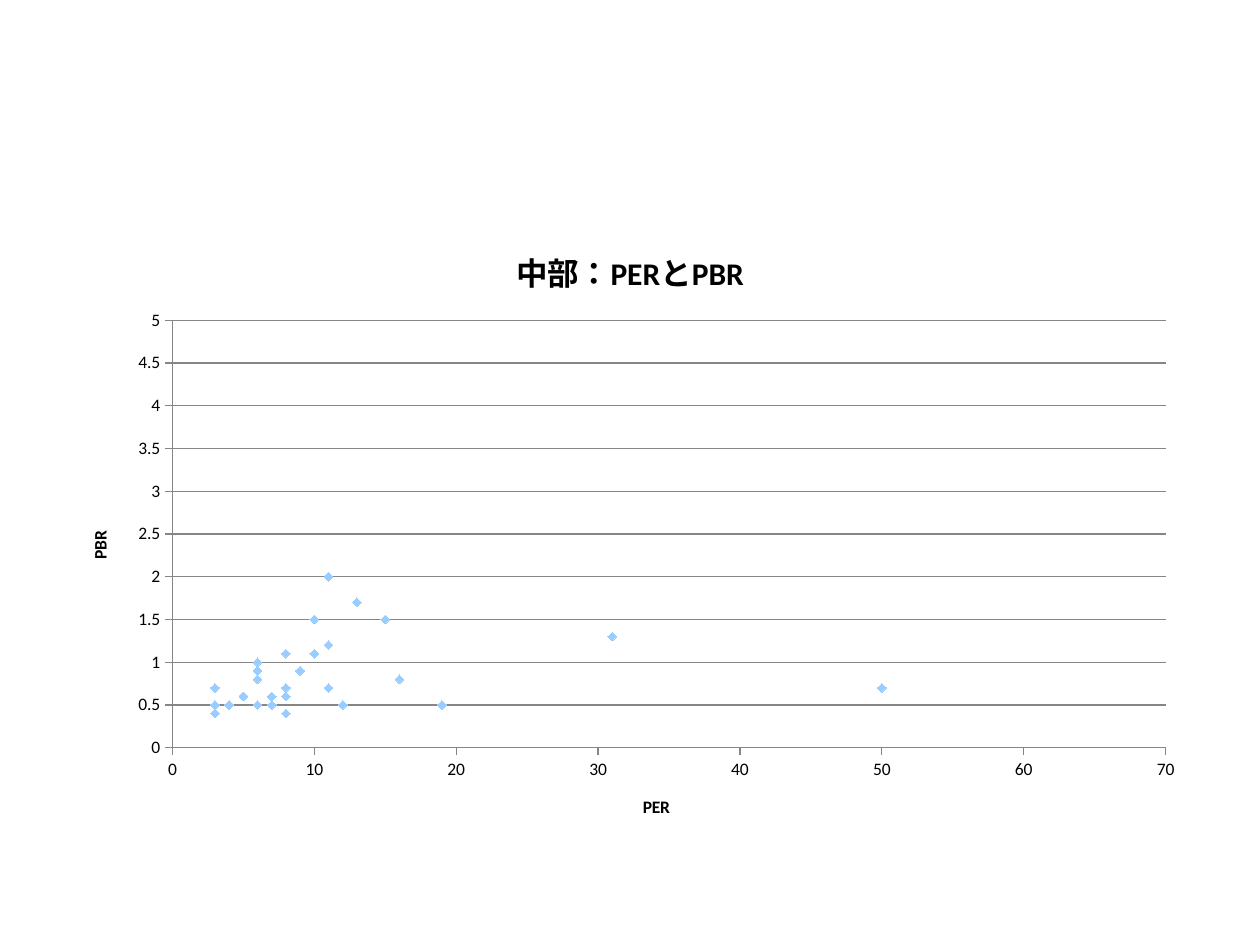
from pptx import Presentation
from pptx.chart.data import XyChartData
from pptx.dml.color import RGBColor
from pptx.enum import chart as ch
from pptx.enum import lang
from pptx.oxml import parse_xml
from pptx.oxml.ns import nsdecls
from pptx.util import Pt

FONT = "Calibri"
GREY = "868686"

# (PER, PBR) of each firm
POINTS = [
    (19, 0.5), (8, 0.6), (15, 1.5), (50, 0.7), (8, 0.7), (16, 0.8),
    (9, 0.9), (7, 0.5), (6, 0.9), (13, 1.7), (3, 0.4), (4, 0.5),
    (7, 0.6), (6, 0.5), (6, 1), (7, 0.6), (11, 1.2), (3, 0.5),
    (5, 0.6), (3, 0.4), (8, 1.1), (6, 0.8), (5, 0.6), (8, 0.4),
    (10, 1.5), (11, 0.7), (12, 0.5), (5, 0.6), (6, 0.9), (4, 0.5),
    (3, 0.7), (10, 1.1), (9, 0.9), (31, 1.3), (5, 0.6), (11, 2),
]


def color(code):
    return RGBColor.from_string(code)


def style(font, size, bold):
    for key, val in {"name": FONT, "size": Pt(size), "bold": bold}.items():
        setattr(font, key, val)
    font.color.rgb = color("000000")


def label(part, words, size):
    frame = part.text_frame
    frame.text = words
    font = frame.paragraphs[0].runs[0].font
    style(font, size, True)
    font.language_id = lang.MSO_LANGUAGE_ID.JAPANESE


def draw_line(line):
    line.color.rgb = color(GREY)
    line.width = Pt(0.75)


def set_axis(axis, name, top, step, grid):
    marks = {
        "minimum_scale": 0, "maximum_scale": top, "major_unit": step,
        "has_major_gridlines": grid, "has_minor_gridlines": False,
        "major_tick_mark": ch.XL_TICK_MARK.OUTSIDE,
        "minor_tick_mark": ch.XL_TICK_MARK.NONE,
        "tick_label_position": ch.XL_TICK_LABEL_POSITION.NEXT_TO_AXIS,
    }
    for key, val in marks.items():
        setattr(axis, key, val)
    axis.tick_labels.number_format = "General"
    axis.tick_labels.number_format_is_linked = False
    style(axis.tick_labels.font, 10, False)
    label(axis.axis_title, name, 10)
    draw_line(axis.format.line)
    if grid:
        draw_line(axis.major_gridlines.format.line)


def set_plot(chart, box, inner):
    """Fix the inner plot area, given in points within the chart box."""
    area = chart.plots[0]._element.getparent()
    for old in area.findall("{*}layout"):
        area.remove(old)
    sizes = "".join(f'<c:{key} val="{part / whole:.4f}"/>'
                    for key, part, whole in zip("xywh", inner, box * 2))
    area.insert(0, parse_xml(
        f'<c:layout {nsdecls("c")}><c:manualLayout><c:layoutTarget val="inner"/>'
        f'<c:xMode val="edge"/><c:yMode val="edge"/>{sizes}</c:manualLayout></c:layout>'))


def add_scatter(slide, left, top, width, height):
    data = XyChartData()
    firms = data.add_series("Series 1")
    for per, pbr in POINTS:
        firms.add_data_point(per, pbr)
    chart = slide.shapes.add_chart(
        ch.XL_CHART_TYPE.XY_SCATTER, Pt(left), Pt(top), Pt(width), Pt(height), data).chart

    # Title and axes
    style(chart.font, 10, False)
    chart.has_legend = False
    chart.has_title = True
    label(chart.chart_title, "中部：PERとPBR", 18)
    chart.chart_title.include_in_layout = False
    set_axis(chart.category_axis, "PER", 70, 10, False)
    set_axis(chart.value_axis, "PBR", 5, 0.5, True)
    set_plot(chart, (width, height), (62.5, 57, width - 80.5, height - 112))

    # Markers without joining lines
    plot = chart.plots[0]
    plot.vary_by_categories = False
    dots = plot.series[0]
    dots.smooth = False
    dots.format.line.fill.background()
    mark = dots.marker
    mark.style = ch.XL_MARKER_STYLE.DIAMOND
    mark.size = 5
    mark.format.fill.solid()
    mark.format.fill.fore_color.rgb = color("99CCFF")
    mark.format.line.color.rgb = color("99CCFF")


def main():
    deck = Presentation()
    deck.slide_width, deck.slide_height = Pt(720), Pt(540)
    slide = deck.slides.add_slide(deck.slide_layouts[6])
    add_scatter(slide, 36, 126, 648, 356.4)
    deck.save("out.pptx")


if __name__ == "__main__":
    main()
